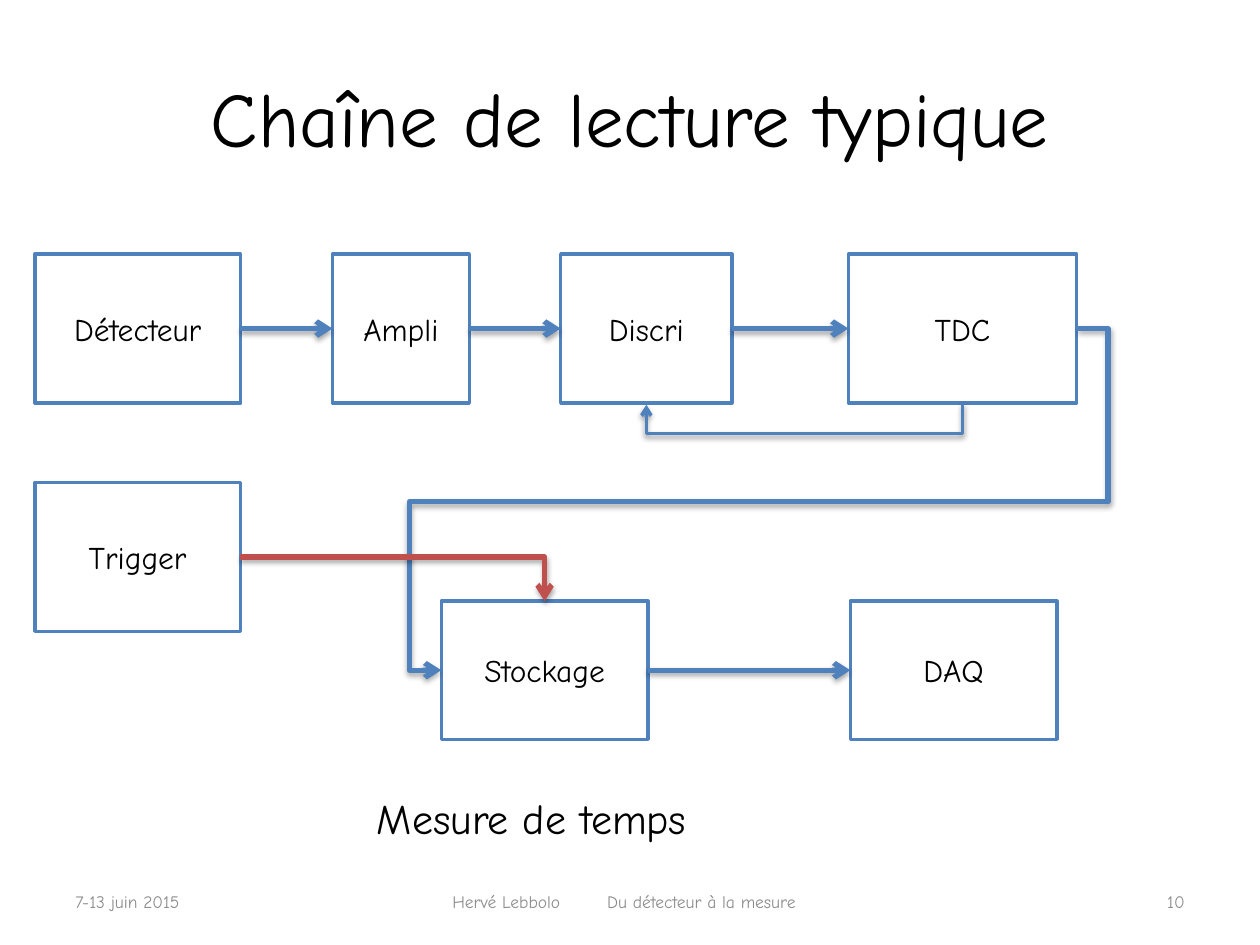
"""Build the slide showing a typical time-measurement readout chain."""
from dataclasses import dataclass

from lxml import etree
from pptx import Presentation
from pptx import util as u
from pptx.dml.color import RGBColor
from pptx.enum import shapes, text
from pptx.oxml import parse_xml
from pptx.oxml.ns import nsdecls, qn


@dataclass(frozen=True)
class Theme:
    """Colours, font and sizes used on the slide."""
    font: str = "Comic Neue"
    black: str = "000000"
    grey: str = "8C8C8C"
    white: str = "FFFFFF"
    blue: str = "4F81BD"
    red: str = "C0504D"
    title: float = 44
    caption: float = 24
    label: float = 18
    footer: float = 10
    thin: float = 2
    thick: float = 3


THEME = Theme()


@dataclass(frozen=True)
class Box:
    """A labelled rectangle, in points."""
    label: str
    left: float
    top: float
    width: float
    height: float

    @property
    def middle_x(self) -> float:
        """Horizontal centre."""
        return self.left + self.width / 2

    @property
    def middle_y(self) -> float:
        """Vertical centre."""
        return self.top + self.height / 2

    @property
    def right(self) -> float:
        """Right edge."""
        return self.left + self.width

    @property
    def bottom(self) -> float:
        """Bottom edge."""
        return self.top + self.height

    @property
    def entry(self) -> tuple[float, float]:
        """Middle of the left side."""
        return self.left, self.middle_y

    @property
    def exit(self) -> tuple[float, float]:
        """Middle of the right side."""
        return self.right, self.middle_y


@dataclass(frozen=True)
class Arrow:
    """An arrow between two points, with its preset route."""
    begin: tuple[float, float]
    end: tuple[float, float]
    preset: str = "line"
    adjustments: tuple[float, ...] = ()
    color: str = THEME.blue
    width: float = THEME.thick
    quarter_turn: bool = False


TOP_ROW, TOP_HEIGHT = 145.25, 85
LOW_ROW, LOW_HEIGHT = 343.5, 79
DETECTOR = Box("Détecteur", 19.9, TOP_ROW, 117.5, TOP_HEIGHT)
AMPLIFIER = Box("Ampli", 190, TOP_ROW, 78.2, TOP_HEIGHT)
DISCRIMINATOR = Box("Discri", 320.4, TOP_ROW, 97.9, TOP_HEIGHT)
TDC = Box("TDC", 484.8, TOP_ROW, 130.3, TOP_HEIGHT)
TRIGGER = Box("Trigger", 19.9, 275.75, 117.5, TOP_HEIGHT)
STORAGE = Box("Stockage", 252.2, LOW_ROW, 118, LOW_HEIGHT)
DAQ = Box("DAQ", 485.9, LOW_ROW, 118, LOW_HEIGHT)
BOXES = (DETECTOR, AMPLIFIER, DISCRIMINATOR, TDC, TRIGGER, STORAGE, DAQ)
LINKS = ((DETECTOR, AMPLIFIER), (AMPLIFIER, DISCRIMINATOR), (DISCRIMINATOR, TDC), (STORAGE, DAQ))
ROUTES = (
    Arrow(TDC.exit, STORAGE.entry, "bentConnector5", (-0.05, 0.507, 1.05)),
    Arrow(TRIGGER.exit, (STORAGE.middle_x, STORAGE.top), "bentConnector2", color=THEME.red),
    Arrow((TDC.middle_x, TDC.bottom), (DISCRIMINATOR.middle_x, TDC.bottom + 1),
          "bentConnector3", (17.5,), width=THEME.thin, quarter_turn=True),
)


def write(shape, content: str, size: float, color: str, align: text.PP_ALIGN) -> None:
    """Write one paragraph into a shape."""
    frame = shape.text_frame
    frame.word_wrap = True
    frame.vertical_anchor = text.MSO_ANCHOR.MIDDLE
    paragraph = frame.paragraphs[0]
    paragraph.text = content
    paragraph.alignment = align
    paragraph.font.name = THEME.font
    paragraph.font.size = u.Pt(size)
    paragraph.font.color.rgb = RGBColor.from_string(color)


def add_text(slide, area: Box, size: float, color: str, align: text.PP_ALIGN):
    """Add a text box filling an area."""
    shape = slide.shapes.add_textbox(
        u.Pt(area.left), u.Pt(area.top), u.Pt(area.width), u.Pt(area.height))
    write(shape, area.label, size, color, align)
    return shape


def add_box(slide, box: Box) -> None:
    """Draw one block of the chain."""
    shape = slide.shapes.add_shape(
        shapes.MSO_SHAPE.RECTANGLE,
        u.Pt(box.left), u.Pt(box.top), u.Pt(box.width), u.Pt(box.height))
    shape.shadow.inherit = False
    shape.fill.solid()
    shape.fill.fore_color.rgb = RGBColor.from_string(THEME.white)
    shape.line.color.rgb = RGBColor.from_string(THEME.blue)
    shape.line.width = u.Pt(THEME.thin)
    write(shape, box.label, THEME.label, THEME.black, text.PP_ALIGN.CENTER)


def add_arrow(slide, arrow: Arrow) -> None:
    """Draw a shadowed arrow along its preset route."""
    (x1, y1), (x2, y2) = arrow.begin, arrow.end
    if arrow.quarter_turn:
        center_x, center_y = (x1 + x2) / 2, (y1 + y2) / 2
        half_width, half_height = abs(y2 - y1) / 2, abs(x2 - x1) / 2
        x1, x2 = center_x - half_width, center_x + half_width
        y1, y2 = center_y - half_height, center_y + half_height
    connector = slide.shapes.add_connector(
        shapes.MSO_CONNECTOR.STRAIGHT, u.Pt(x1), u.Pt(y1), u.Pt(x2), u.Pt(y2))
    connector.line.color.rgb = RGBColor.from_string(arrow.color)
    connector.line.width = u.Pt(arrow.width)
    properties = connector._element.spPr
    if arrow.quarter_turn:
        properties.find(qn("a:xfrm")).set("rot", "5400000")
    geometry = properties.find(qn("a:prstGeom"))
    geometry.set("prst", arrow.preset)
    guides = geometry.find(qn("a:avLst"))
    for number, value in enumerate(arrow.adjustments, 1):
        etree.SubElement(guides, qn("a:gd"), name=f"adj{number}", fmla=f"val {round(value * 100000)}")
    etree.SubElement(properties.find(qn("a:ln")), qn("a:tailEnd"), type="arrow")
    thick = arrow.width == THEME.thick
    distance, alpha = (u.Pt(1.8), 35000) if thick else (u.Pt(1.6), 38000)
    properties.append(parse_xml(
        f'<a:effectLst {nsdecls("a")}><a:outerShdw blurRad="{u.Pt(3.1)}" dist="{distance}" '
        f'dir="5400000" rotWithShape="0"><a:srgbClr val="{THEME.black}">'
        f'<a:alpha val="{alpha}"/></a:srgbClr></a:outerShdw></a:effectLst>'))


def add_footer(slide) -> None:
    """Add the date, the author with the course name, and the page number."""
    top, height = 500.5, 28.8
    add_text(slide, Box("7-13 juin 2015", 36, top, 108.7, height),
             THEME.footer, THEME.grey, text.PP_ALIGN.LEFT)
    add_text(slide, Box("10", 598.3, top, 85.7, height),
             THEME.footer, THEME.grey, text.PP_ALIGN.RIGHT)
    course = slide.shapes.add_textbox(u.Pt(167), u.Pt(top), u.Pt(380), u.Pt(height))
    course.text_frame.margin_left = u.Pt(91.5)
    properties = course.text_frame.paragraphs[0]._p.get_or_add_pPr()
    tabs = etree.SubElement(properties, qn("a:tabLst"))
    etree.SubElement(tabs, qn("a:tab"), pos=str(u.Pt(88.5)), algn="l")
    write(course, "Hervé Lebbolo\tDu détecteur à la mesure",
          THEME.footer, THEME.grey, text.PP_ALIGN.LEFT)


def main() -> None:
    """Build and save the slide."""
    presentation = Presentation()
    presentation.slide_width, presentation.slide_height = u.Pt(720), u.Pt(540)
    slide = presentation.slides.add_slide(presentation.slide_layouts[6])
    add_text(slide, Box("Chaîne de lecture typique", 36, 21.6, 648, 90),
             THEME.title, THEME.black, text.PP_ALIGN.CENTER)
    add_footer(slide)
    for box in BOXES:
        add_box(slide, box)
    for source, target in LINKS:
        add_arrow(slide, Arrow(source.exit, target.entry))
    for route in ROUTES:
        add_arrow(slide, route)
    caption = add_text(slide, Box("Mesure de temps", 208.3, 449.5, 208.8, 36),
                       THEME.caption, THEME.black, text.PP_ALIGN.LEFT)
    caption.text_frame.word_wrap = False
    caption.text_frame.vertical_anchor = text.MSO_ANCHOR.TOP
    caption.text_frame.auto_size = text.MSO_AUTO_SIZE.SHAPE_TO_FIT_TEXT
    presentation.save("out.pptx")


if __name__ == "__main__":
    main()
